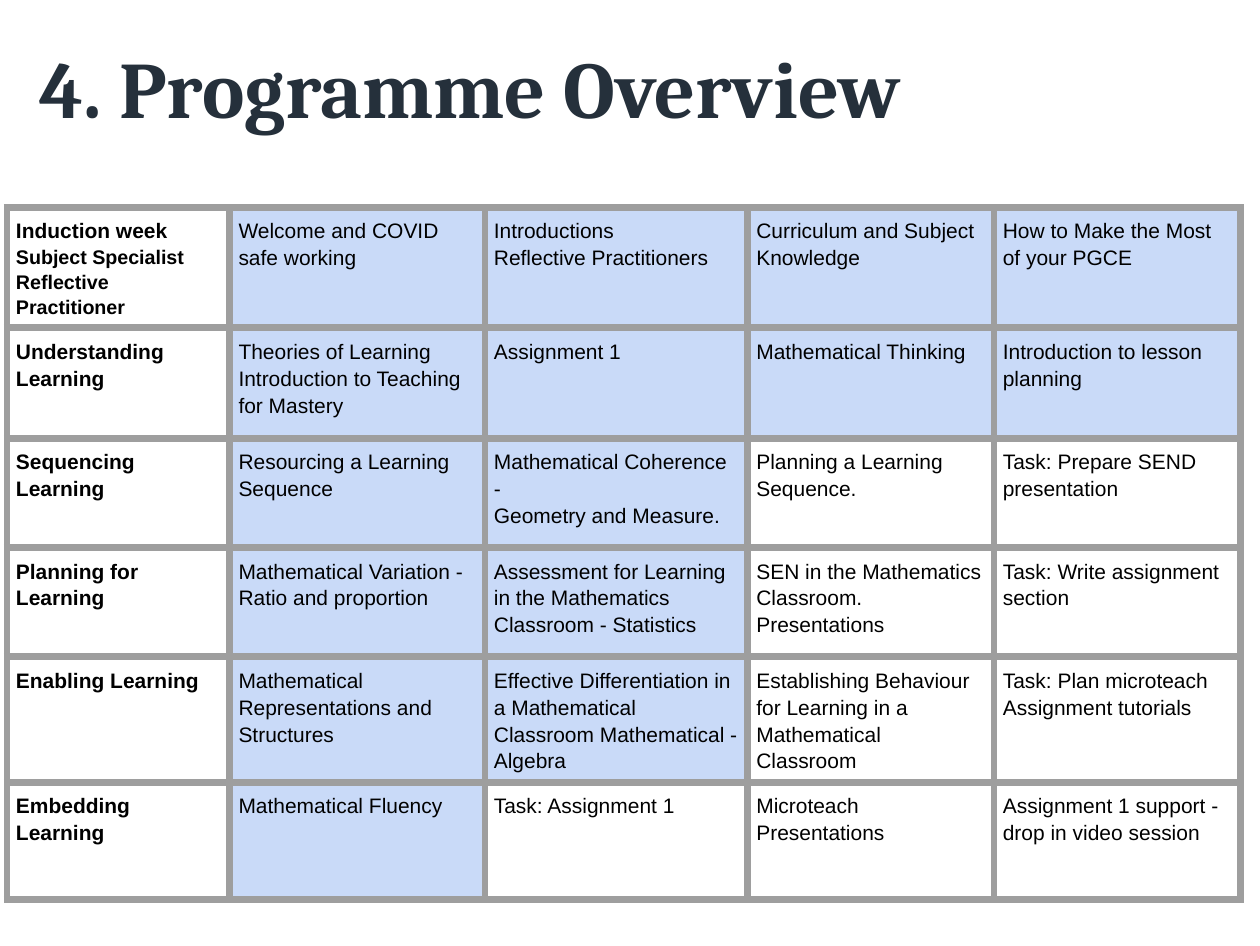
from lxml.etree import SubElement
from pptx import Presentation
from pptx.dml.color import RGBColor as RGB
from pptx.enum.text import MSO_ANCHOR as ANCHOR, PP_ALIGN as ALIGN
from pptx.oxml.ns import qn
from pptx.util import Inches as In, Pt

COLORS = {"title": "25303B", "text": "000000", "done": "C9DAF8", "grid": "9E9E9E"}
COLS = [2.51, 2.88, 2.96, 2.78, 2.78]
ROWS = [1.25, 1.25, 1.23, 1.23, 1.34, 1.32]
SHADED = [4, 4, 2, 2, 2, 1]
PROGRAMME = [
    ["Induction week\nSubject Specialist Reflective Practitioner",
     "Welcome and COVID safe working",
     "Introductions\nReflective Practitioners",
     "Curriculum and Subject Knowledge",
     "How to Make the Most of your PGCE"],
    ["Understanding\nLearning",
     "Theories of Learning\nIntroduction to Teaching for Mastery",
     "Assignment 1",
     "Mathematical Thinking",
     "Introduction to lesson planning"],
    ["Sequencing\nLearning",
     "Resourcing a Learning Sequence",
     "Mathematical Coherence -\nGeometry and Measure.",
     "Planning a Learning Sequence.",
     "Task: Prepare SEND presentation"],
    ["Planning for\nLearning",
     "Mathematical Variation -\nRatio and proportion",
     "Assessment for Learning in the Mathematics Classroom - Statistics",
     "SEN in the Mathematics Classroom. Presentations",
     "Task: Write assignment section"],
    ["Enabling Learning",
     "Mathematical Representations and Structures",
     "Effective Differentiation in a Mathematical Classroom Mathematical - Algebra",
     "Establishing Behaviour for Learning in a Mathematical Classroom",
     "Task: Plan microteach\nAssignment tutorials"],
    ["Embedding Learning",
     "Mathematical Fluency",
     "Task: Assignment 1",
     "Microteach\nPresentations",
     "Assignment 1 support - drop in video session"],
]


def set_font(font, color, **values):
    for name, value in values.items():
        setattr(font, name, value)
    font.color.rgb = RGB.from_string(COLORS[color])


def add_borders(cell):
    tcPr = cell._tc.get_or_add_tcPr()
    for side in ("lnL", "lnR", "lnT", "lnB"):
        ln = SubElement(tcPr, qn(f"a:{side}"), w=str(Pt(6)))
        fill = SubElement(ln, qn("a:solidFill"))
        SubElement(fill, qn("a:srgbClr"), val=COLORS["grid"])


prs = Presentation()
prs.slide_width, prs.slide_height = In(14.21), In(10.67)
s = prs.slides.add_slide(prs.slide_layouts[5])

title = s.shapes.title
title.left, title.top, title.width, title.height = In(0.3), In(0.24), In(13.62), In(1.46)
tf = title.text_frame
tf.text = "4. Programme Overview"
frame = {"vertical_anchor": ANCHOR.MIDDLE, "word_wrap": True,
         "margin_left": In(0.14), "margin_right": In(0.14),
         "margin_top": In(0.07), "margin_bottom": In(0.07)}
for name, value in frame.items():
    setattr(tf, name, value)
p = tf.paragraphs[0]
p.alignment = ALIGN.LEFT
set_font(p.runs[0].font, "title", name="Cambria", size=Pt(65), bold=True)

table = s.shapes.add_table(len(ROWS), len(COLS), In(0.08), In(2.34),
                           In(sum(COLS)), In(sum(ROWS))).table
table.first_row = table.horz_banding = False
for column, width in zip(table.columns, COLS):
    column.width = In(width)

for i, (height, texts) in enumerate(zip(ROWS, PROGRAMME)):
    table.rows[i].height = In(height)
    for j, text in enumerate(texts):
        cell = table.cell(i, j)
        for side in ("left", "right", "top", "bottom"):
            setattr(cell, f"margin_{side}", In(0.1))
        add_borders(cell)
        if 1 <= j <= SHADED[i]:
            cell.fill.solid()
            cell.fill.fore_color.rgb = RGB.from_string(COLORS["done"])
        else:
            cell.fill.background()
        cell.text = text
        for k, p in enumerate(cell.text_frame.paragraphs):
            p.line_spacing = 1.15
            size = 16 if (i, j, k) == (0, 0, 1) else 17
            set_font(p.runs[0].font, "text", name="Arial", size=Pt(size), bold=j == 0)

prs.save("out.pptx")
